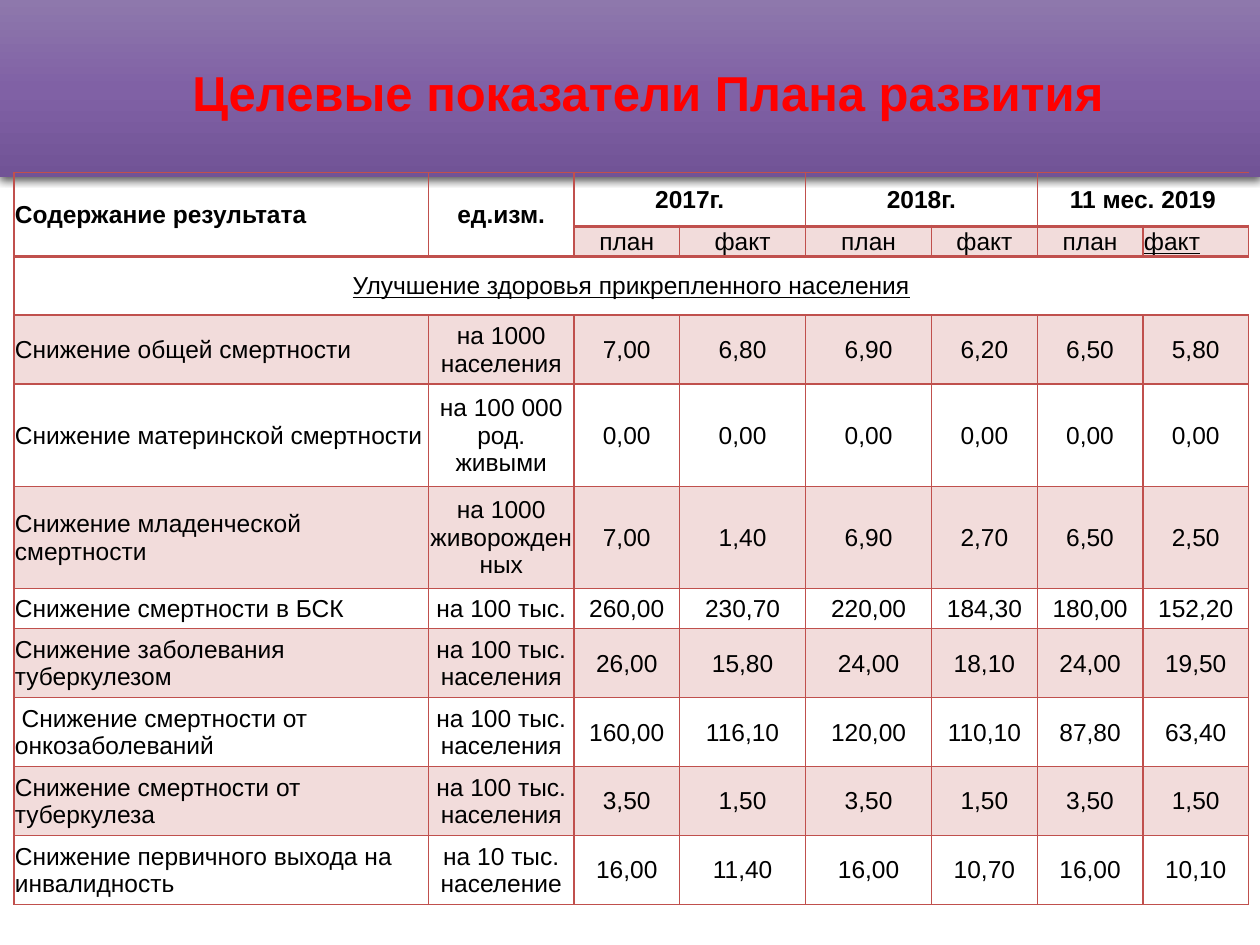
from typing import Any, NamedTuple

from lxml import etree
from pptx import Presentation
from pptx import util as u
from pptx.dml.color import RGBColor
from pptx.enum import shapes, text
from pptx.oxml import parse_xml
from pptx.oxml.ns import nsdecls, qn

RED = RGBColor(0xFF, 0x00, 0x00)
BLACK = RGBColor(0x00, 0x00, 0x00)
BRICK = RGBColor(0xC0, 0x50, 0x4D)
BANNER_STOPS = {
    0: RGBColor(0x8E, 0x78, 0xAC),
    50: RGBColor(0x80, 0x61, 0xA5),
    100: RGBColor(0x71, 0x53, 0x96),
}
BAND_OPACITY = 20
NO_STYLE = "{2D5ABB26-0587-4C30-8999-92F81FD0307C}"
LEFT, CENTER, JUSTIFY = text.PP_ALIGN.LEFT, text.PP_ALIGN.CENTER, text.PP_ALIGN.JUSTIFY

TITLE_FORMAT = {"name": "Arial", "size": u.Pt(28), "bold": True}
CELL_FORMAT = {"name": "Arial", "size": u.Pt(14), "bold": False}
CELL_BOX = {
    "margin_left": u.Cm(0.02),
    "margin_right": u.Cm(0.02),
    "margin_top": u.Cm(0.02),
    "margin_bottom": u.Cm(0),
    "vertical_anchor": text.MSO_ANCHOR.MIDDLE,
}
COLUMN_WIDTHS = [8.36, 2.93, 2.13, 2.54, 2.54, 2.13, 2.13, 2.13]
HEADER_HEIGHTS = [1.08, 0.61, 1.18]
SECTION_ROW = 2
LAST_COLUMN = len(COLUMN_WIDTHS) - 1


class Indicator(NamedTuple):
    name: str
    unit: str
    values: str
    height: float = 1.39


class Span(NamedTuple):
    top: int
    left: int
    bottom: int
    right: int

    def holds(self, row: int, column: int) -> bool:
        return self.top <= row <= self.bottom and self.left <= column <= self.right


YEARS = ["2017г.", "2018г.", "11 мес. 2019"]
SECTION = "Улучшение здоровья прикрепленного населения"
INDICATORS = [
    Indicator("Снижение общей смертности", "на 1000 населения",
              "7,00 6,80 6,90 6,20 6,50 5,80"),
    Indicator("Снижение материнской смертности", "на 100 000 род. живыми",
              "0,00 0,00 0,00 0,00 0,00 0,00", 2.06),
    Indicator("Снижение младенческой смертности", "на 1000 живорожденных",
              "7,00 1,40 6,90 2,70 6,50 2,50", 2.06),
    Indicator("Снижение смертности в БСК", "на 100 тыс.",
              "260,00 230,70 220,00 184,30 180,00 152,20", 0.81),
    Indicator("Снижение заболевания туберкулезом", "на 100 тыс. населения",
              "26,00 15,80 24,00 18,10 24,00 19,50"),
    Indicator(" Снижение смертности от онкозаболеваний", "на 100 тыс. населения",
              "160,00 116,10 120,00 110,10 87,80 63,40"),
    Indicator("Снижение смертности от туберкулеза", "на 100 тыс. населения",
              "3,50 1,50 3,50 1,50 3,50 1,50"),
    Indicator("Снижение первичного выхода на инвалидность", "на 10 тыс. население",
              "16,00 11,40 16,00 10,70 16,00 10,10"),
]
SPANS = [
    *(Span(0, column, 1, column) for column in (0, 1)),
    *(Span(0, column, 0, column + 1) for column in (2, 4, 6)),
    Span(SECTION_ROW, 0, SECTION_ROW, LAST_COLUMN),
]


def set_attributes(target: Any, values: dict[str, Any]) -> None:
    for name, value in values.items():
        setattr(target, name, value)


def write(frame: Any, words: str, alignment: Any, color: RGBColor,
          font_format: dict[str, Any]) -> None:
    paragraph = frame.paragraphs[0]
    paragraph.alignment = alignment
    run = paragraph.add_run()
    run.text = words
    set_attributes(run.font, font_format)
    run.font.color.rgb = color


def add_banner(slide: Any) -> None:
    banner = slide.shapes.add_shape(
        shapes.MSO_SHAPE.RECTANGLE, 0, 0, u.Cm(25.4), u.Cm(3.58))
    banner.fill.gradient()
    banner.fill.gradient_angle = 270
    stop_list = banner._element.spPr.find(qn("a:gradFill")).find(qn("a:gsLst"))
    for stop in list(stop_list):
        stop_list.remove(stop)
    for position, color in BANNER_STOPS.items():
        stop_list.append(parse_xml(
            f'<a:gs {nsdecls("a")} pos="{position * 1000}"><a:srgbClr val="{color}"/></a:gs>'))
    banner.line.fill.background()
    banner.shadow.inherit = False
    banner._element.spPr.find(qn("a:effectLst")).append(parse_xml(
        f'<a:outerShdw {nsdecls("a")} blurRad="{u.Pt(4.5)}" dist="{u.Pt(1.5)}" '
        'dir="5400000" rotWithShape="0"><a:srgbClr val="000000">'
        '<a:alpha val="63000"/></a:srgbClr></a:outerShdw>'))


def add_title(slide: Any) -> None:
    box = slide.shapes.add_textbox(u.Cm(3.63), u.Cm(1.12), u.Cm(21.06), u.Cm(1.45))
    frame = box.text_frame
    set_attributes(frame, {"word_wrap": True, "vertical_anchor": text.MSO_ANCHOR.MIDDLE})
    write(frame, "Целевые показатели Плана развития", JUSTIFY, RED, TITLE_FORMAT)


def same_span(first: tuple[int, int], second: tuple[int, int]) -> bool:
    return any(span.holds(*first) and span.holds(*second) for span in SPANS)


def draw_borders(cell: Any, row: int, column: int) -> None:
    """Line every side except those inside a merged cell; header rules are thicker."""
    sides = {
        "lnL": (row, column - 1, 1),
        "lnR": (row, column + 1, 1),
        "lnT": (row - 1, column, 2 if row in (1, 2) else 1),
        "lnB": (row + 1, column, 2 if row in (0, 1) else 1),
    }
    lines = [
        parse_xml(f'<a:{side} {nsdecls("a")} w="{u.Pt(points)}"><a:solidFill>'
                  f'<a:srgbClr val="{BRICK}"/></a:solidFill></a:{side}>')
        for side, (next_row, next_column, points) in sides.items()
        if not same_span((row, column), (next_row, next_column))
    ]
    properties = cell._tc.get_or_add_tcPr()
    for index, line in enumerate(lines):
        properties.insert(index, line)


def fill_cell(cell: Any, banded: bool) -> None:
    if not banded:
        cell.fill.background()
        return
    cell.fill.solid()
    cell.fill.fore_color.rgb = BRICK
    color = cell._tc.tcPr.find(qn("a:solidFill")).find(qn("a:srgbClr"))
    etree.SubElement(color, qn("a:alpha")).set("val", str(BAND_OPACITY * 1000))


def table_rows() -> list[list[str]]:
    years = [words for year in YEARS for words in (year, "")]
    return [
        ["Содержание результата", "ед.изм.", *years],
        ["", "", *["план", "факт"] * len(YEARS)],
        [SECTION, *[""] * LAST_COLUMN],
        *([item.name, item.unit, *item.values.split()] for item in INDICATORS),
    ]


def add_indicator_table(slide: Any) -> None:
    rows = table_rows()
    heights = HEADER_HEIGHTS + [item.height for item in INDICATORS]
    table = slide.shapes.add_table(
        len(rows), len(COLUMN_WIDTHS), u.Cm(0.28), u.Cm(3.48),
        u.Cm(sum(COLUMN_WIDTHS)), u.Cm(sum(heights))).table
    set_attributes(table, {"first_row": False, "horz_banding": False})
    table._tbl.tblPr.find(qn("a:tableStyleId")).text = NO_STYLE
    for column, width in zip(table.columns, COLUMN_WIDTHS):
        column.width = u.Cm(width)
    for row, height in zip(table.rows, heights):
        row.height = u.Cm(height)
    for span in SPANS:
        table.cell(span.top, span.left).merge(table.cell(span.bottom, span.right))

    for row, row_words in enumerate(rows):
        for column, words in enumerate(row_words):
            cell = table.cell(row, column)
            set_attributes(cell, CELL_BOX)
            fill_cell(cell, row % 2 == 1 and not cell.is_spanned)
            draw_borders(cell, row, column)
            if cell.is_spanned:
                continue
            last_fact = (row, column) == (1, LAST_COLUMN)
            at_left = last_fact or (column == 0 and row != SECTION_ROW)
            font_format = CELL_FORMAT | {
                "bold": row == 0, "underline": last_fact or row == SECTION_ROW}
            write(cell.text_frame, words, LEFT if at_left else CENTER, BLACK, font_format)


def main() -> None:
    presentation = Presentation()
    set_attributes(presentation, {"slide_width": u.Cm(25.4), "slide_height": u.Cm(19.05)})
    slide = presentation.slides.add_slide(presentation.slide_layouts[6])
    add_banner(slide)
    add_title(slide)
    add_indicator_table(slide)
    presentation.save("out.pptx")


if __name__ == "__main__":
    main()
